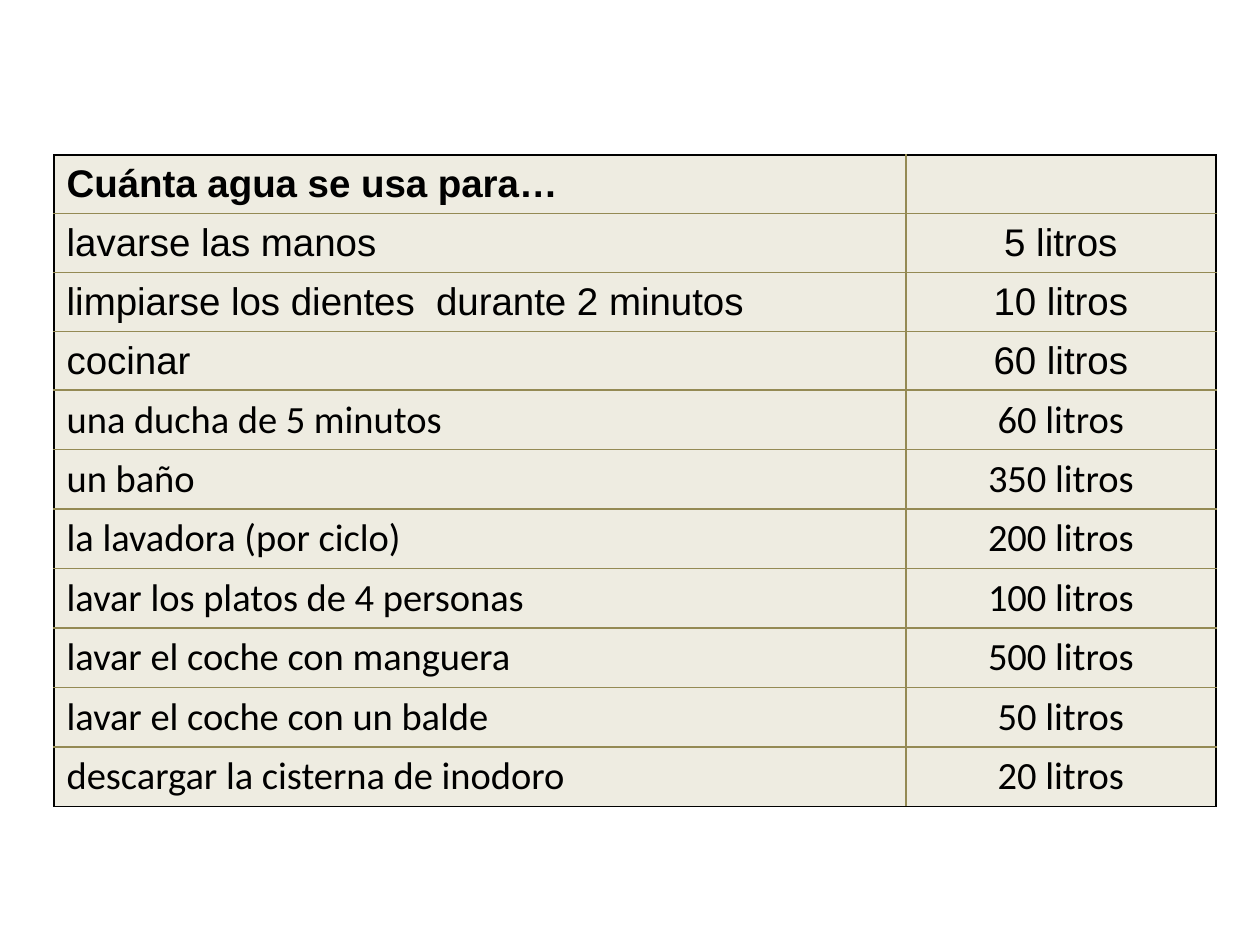
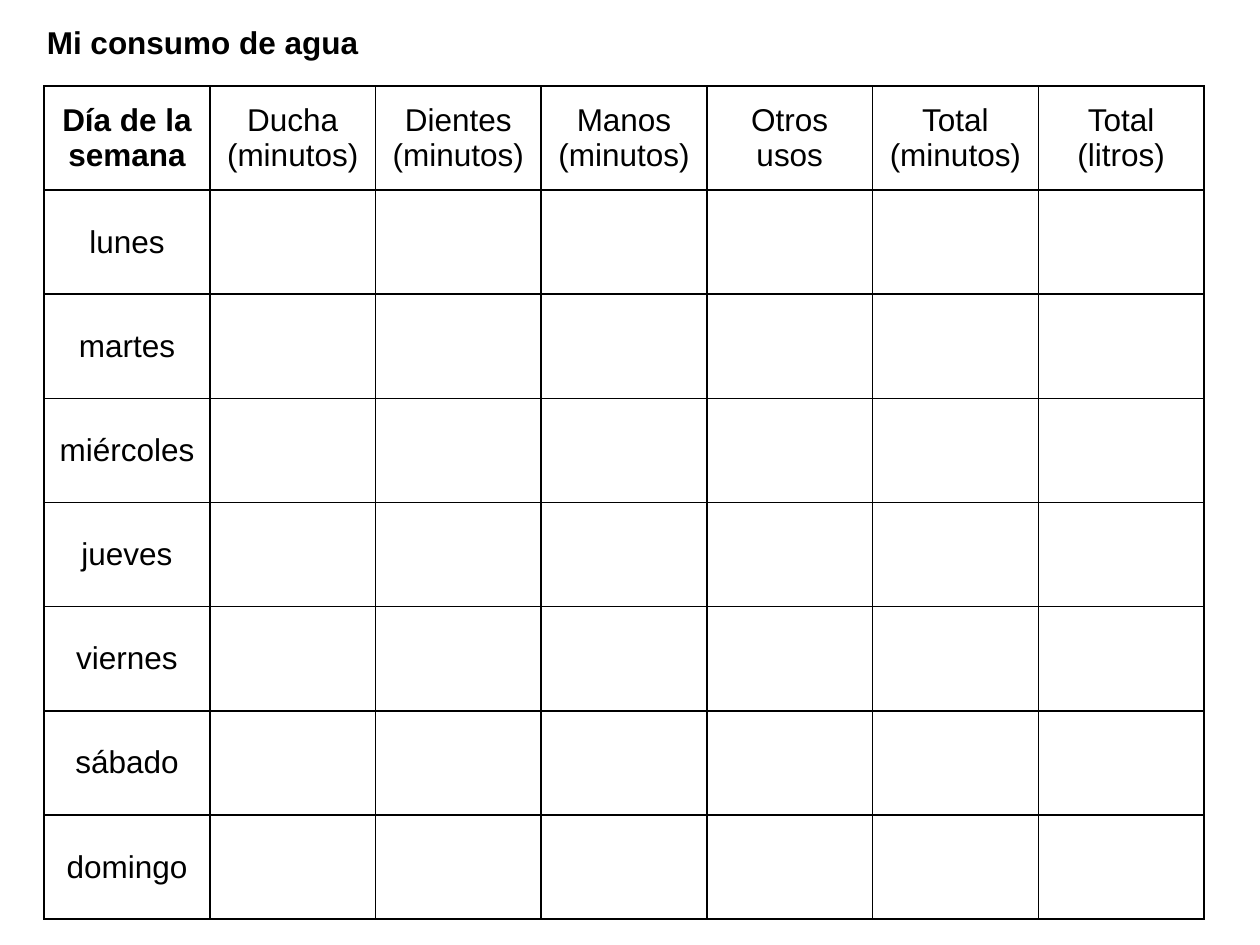
from lxml.etree import SubElement
from pptx import Presentation
from pptx.dml.color import RGBColor
from pptx.enum.text import MSO_ANCHOR, MSO_AUTO_SIZE, PP_ALIGN
from pptx.oxml.ns import qn
from pptx.util import Cm, Pt

COLORS = {"text": "000000", "outer": "000000", "olive": "948A54", "cream": "EEECE1"}
TITLE_ONLY, BLANK = 5, 6

WATER_USES = [
    ("Cuánta agua se usa para…", ""),
    ("lavarse las manos", "5 litros"),
    ("limpiarse los dientes  durante 2 minutos", "10 litros"),
    ("cocinar", "60 litros"),
    ("una ducha de 5 minutos", "60 litros"),
    ("un baño", "350 litros"),
    ("la lavadora (por ciclo)", "200 litros"),
    ("lavar los platos de 4 personas", "100 litros"),
    ("lavar el coche con manguera", "500 litros"),
    ("lavar el coche con un balde", "50 litros"),
    ("descargar la cisterna de inodoro", "20 litros"),
]
ARIAL_ROWS = 4  # the remaining rows are set in Calibri

DIARY_HEADS = ["Día de la semana", "Ducha (minutos)", "Dientes (minutos)",
               "Manos\v(minutos)", "Otros usos", "Total (minutos)", "Total (litros)"]
DAYS = ["lunes", "martes", "miércoles", "jueves", "viernes", "sábado", "domingo"]


class Deck:
    """Shared style and the slide being built."""

    def __init__(self):
        self.prs = Presentation()
        self.prs.slide_width, self.prs.slide_height = Cm(25.4), Cm(19.05)
        self.s = None

    def slide(self, layout):
        self.s = self.prs.slides.add_slide(self.prs.slide_layouts[layout])

    def style(self, p, size, font="Arial", bold=False, align=PP_ALIGN.LEFT):
        p.alignment = align
        p.font.size, p.font.name, p.font.bold = Pt(size), font, bold
        p.font.color.rgb = RGBColor.from_string(COLORS["text"])

    def title(self, text, left, top, width, height):
        sp = self.s.shapes.title
        sp.left, sp.top, sp.width, sp.height = Cm(left), Cm(top), Cm(width), Cm(height)
        tf = sp.text_frame
        tf.text = text
        tf.vertical_anchor = MSO_ANCHOR.TOP
        tf.auto_size = MSO_AUTO_SIZE.SHAPE_TO_FIT_TEXT
        self.style(tf.paragraphs[0], 18, bold=True)

    def border(self, cell, side, color):
        ln = SubElement(cell._tc.get_or_add_tcPr(), qn(f"a:ln{side}"), w=str(Pt(1)))
        SubElement(SubElement(ln, qn("a:solidFill")), qn("a:srgbClr"), val=COLORS[color])

    def table(self, rows, left, top, col_widths, height, inner, fill, look):
        """look(row, column) gives the text style of a cell."""
        n_rows, n_cols = len(rows), len(col_widths)
        tbl = self.s.shapes.add_table(n_rows, n_cols, Cm(left), Cm(top),
                                      Cm(sum(col_widths)), Cm(height)).table
        tbl.first_row = tbl.horz_banding = False
        for col, width in zip(tbl.columns, col_widths):
            col.width = Cm(width)
        for i, row in enumerate(rows):
            tbl.rows[i].height = Cm(height / n_rows)
            for j, text in enumerate(row):
                cell = tbl.cell(i, j)
                edges = {"L": j == 0, "R": j == n_cols - 1,
                         "T": i == 0, "B": i == n_rows - 1}
                for side, at_edge in edges.items():
                    self.border(cell, side, "outer" if at_edge else inner)
                if fill:
                    cell.fill.solid()
                    cell.fill.fore_color.rgb = RGBColor.from_string(COLORS[fill])
                else:
                    cell.fill.background()
                cell.vertical_anchor = MSO_ANCHOR.MIDDLE
                cell.text = text
                self.style(cell.text_frame.paragraphs[0], **look(i, j))


def uses_look(row, col):
    return {"size": 22, "bold": row == 0,
            "font": "Arial" if row < ARIAL_ROWS else "Calibri",
            "align": PP_ALIGN.CENTER if col else PP_ALIGN.LEFT}


def diary_look(row, col):
    return {"size": 18, "bold": row == col == 0, "align": PP_ALIGN.CENTER}


def main():
    deck = Deck()

    # Litres per use
    deck.slide(BLANK)
    deck.table(WATER_USES, 1.09, 3.12, [17.17, 6.25], 13.05, "olive", "cream", uses_look)

    # Weekly diary to fill in
    deck.slide(TITLE_ONLY)
    deck.title("Mi consumo de agua", 0.69, 0.33, 20.02, 1.02)
    blanks = [""] * (len(DIARY_HEADS) - 1)
    diary = [DIARY_HEADS] + [[day] + blanks for day in DAYS]
    deck.table(diary, 0.89, 1.73, [3.34] * len(DIARY_HEADS), 16.8, "outer", None, diary_look)

    deck.prs.save("out.pptx")


if __name__ == "__main__":
    main()
